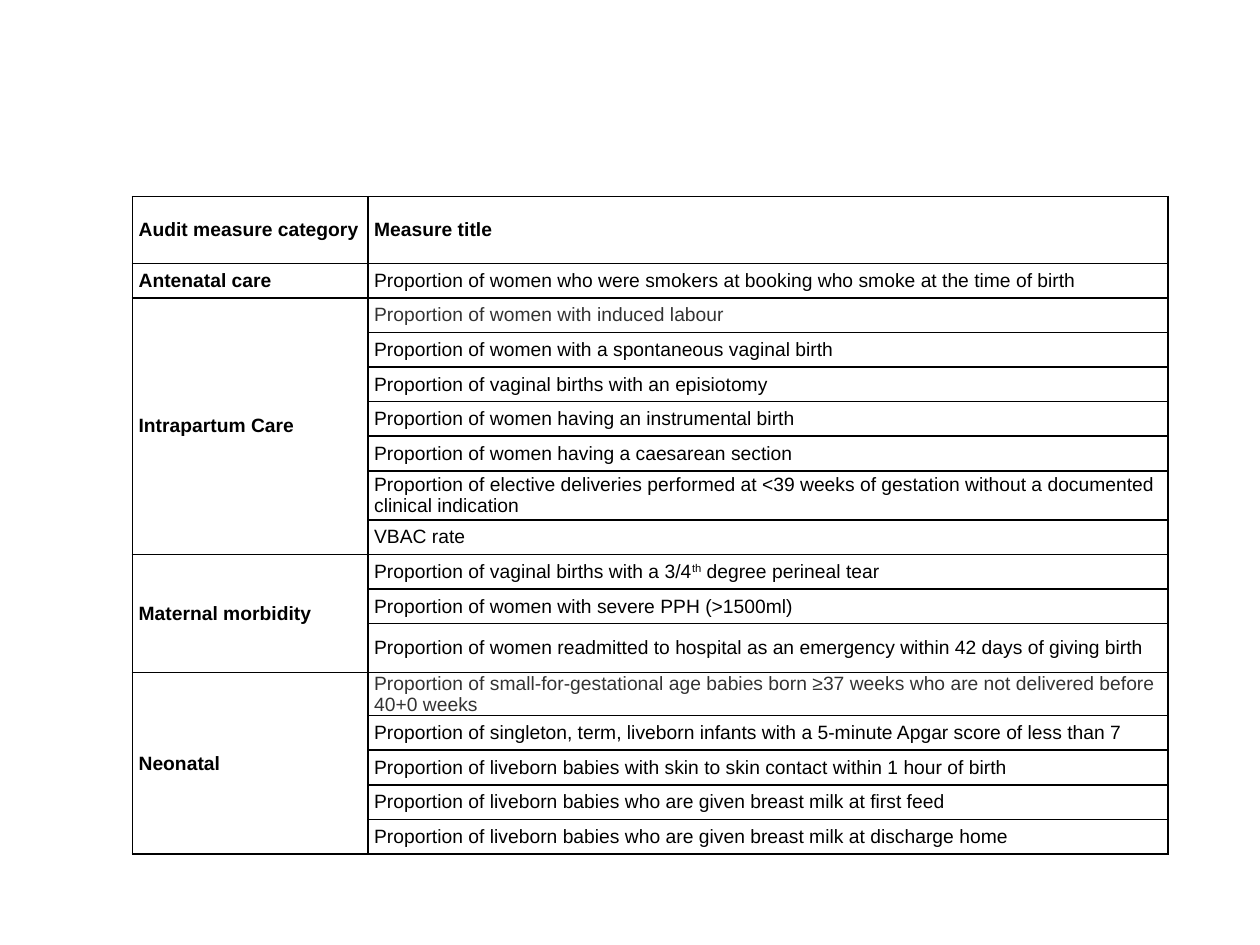
from lxml import etree
from pptx import Presentation, util as u
from pptx.dml.color import RGBColor
from pptx.enum import text
from pptx.oxml.ns import qn

BLACK = RGBColor(0x00, 0x00, 0x00)
GREY = RGBColor(0x33, 0x33, 0x33)

# Table grid in inches: listed rows differ, the rest share what is left
LEFT, TOP, HIGH = 1.05, 1.56, 5.22
COLS = (1.87, 6.35)
TALL = {0: 0.53, 7: 0.39, 11: 0.39, 12: 0.34}

HEAD = ("Audit measure category", "Measure title")
GROUPS = (
    ("Antenatal care", (
        "Proportion of women who were smokers at booking who smoke at the time of birth",
    )),
    ("Intrapartum Care", (
        "Proportion of women with induced labour",
        "Proportion of women with a spontaneous vaginal birth",
        "Proportion of vaginal births with an episiotomy",
        "Proportion of women having an instrumental birth",
        "Proportion of women having a caesarean section",
        "Proportion of elective deliveries performed at <39 weeks of gestation "
        "without a documented clinical indication",
        "VBAC rate",
    )),
    ("Maternal morbidity", (
        "Proportion of vaginal births with a 3/4^th^ degree perineal tear",
        "Proportion of women with severe PPH (>1500ml)",
        "Proportion of women readmitted to hospital as an emergency within 42 days "
        "of giving birth",
    )),
    ("Neonatal", (
        "Proportion of small-for-gestational age babies born ≥37 weeks who are not "
        "delivered before 40+0 weeks",
        "Proportion of singleton, term, liveborn infants with a 5-minute Apgar score "
        "of less than 7",
        "Proportion of liveborn babies with skin to skin contact within 1 hour of birth",
        "Proportion of liveborn babies who are given breast milk at first feed",
        "Proportion of liveborn babies who are given breast milk at discharge home",
    )),
)
GREY_ROWS = (2, 12)

CELL = {
    "margin_left": u.Inches(0.05), "margin_right": u.Inches(0.05),
    "margin_top": 0, "margin_bottom": 0,
    "vertical_anchor": text.MSO_ANCHOR.MIDDLE,
}
FONT = {"name": "Arial", "size": u.Pt(11)}


def apply(item, vals):
    for key, val in vals.items():
        setattr(item, key, val)


def edge(cell):
    """Draw a thin black line on all four sides."""
    props = cell._tc.get_or_add_tcPr()
    for spot, side in enumerate(("lnL", "lnR", "lnT", "lnB")):
        line = etree.Element(qn(f"a:{side}"), w=str(u.Pt(1)))
        fill = etree.SubElement(line, qn("a:solidFill"))
        etree.SubElement(fill, qn("a:srgbClr"), val=str(BLACK))
        props.insert(spot, line)


def write(cell, words, bold=False, color=BLACK):
    """Fill a cell; text between carets is raised."""
    para = cell.text_frame.paragraphs[0]
    for spot, part in enumerate(words.split("^")):
        run = para.add_run()
        run.text = part
        apply(run.font, {**FONT, "bold": bold})
        run.font.color.rgb = color
        if spot % 2:
            run.font._element.set("baseline", "30000")


def make_grid(slide, count):
    """Add a plain ruled table with the set column and row sizes."""
    frame = slide.shapes.add_table(
        count, len(COLS), u.Inches(LEFT), u.Inches(TOP),
        u.Inches(sum(COLS)), u.Inches(HIGH))
    grid = frame.table
    apply(grid, {"first_row": False, "horz_banding": False})
    for col, wide in zip(grid.columns, COLS):
        col.width = u.Inches(wide)
    rest = (HIGH - sum(TALL.values())) / (count - len(TALL))
    for num, row in enumerate(grid.rows):
        row.height = u.Inches(TALL.get(num, rest))
    for cell in grid.iter_cells():
        apply(cell, CELL)
        cell.fill.background()
        edge(cell)
        apply(cell.text_frame.paragraphs[0].font, FONT)
    return grid


def main():
    deck = Presentation()
    apply(deck, {"slide_width": u.Inches(10), "slide_height": u.Inches(7.5)})
    slide = deck.slides.add_slide(deck.slide_layouts[6])
    grid = make_grid(slide, 1 + sum(len(rows) for _, rows in GROUPS))

    # Heading row
    for col, words in enumerate(HEAD):
        write(grid.cell(0, col), words, bold=True)

    # One merged category cell beside its measures
    top = 1
    for name, rows in GROUPS:
        first = grid.cell(top, 0)
        if len(rows) > 1:
            first.merge(grid.cell(top + len(rows) - 1, 0))
        write(first, name, bold=True)
        for num, words in enumerate(rows, top):
            write(grid.cell(num, 1), words,
                  color=GREY if num in GREY_ROWS else BLACK)
        top += len(rows)

    deck.save("out.pptx")


if __name__ == "__main__":
    main()
